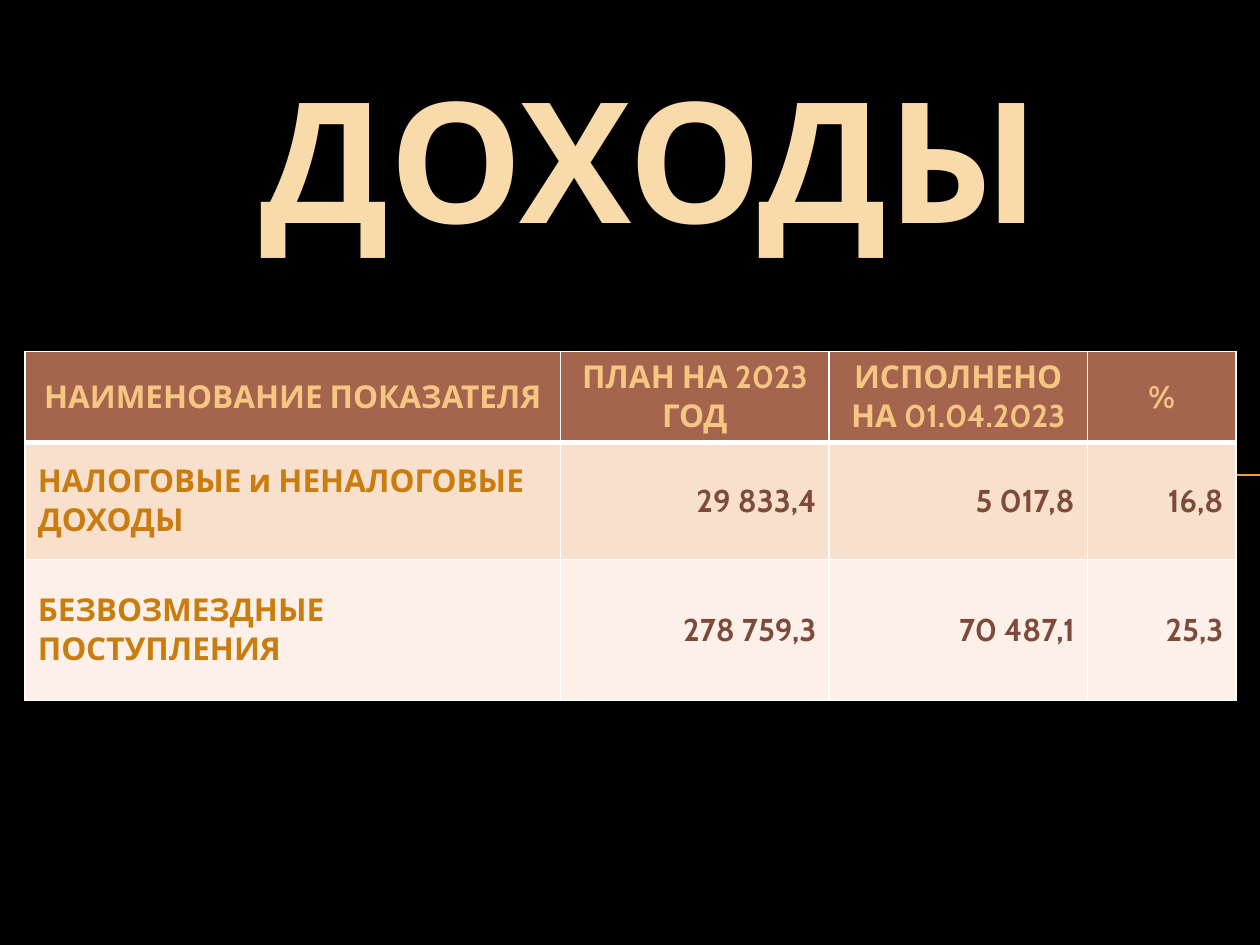
from pptx import Presentation
from pptx.util import Inches, Pt
from pptx.dml.color import RGBColor
from pptx.enum.shapes import MSO_CONNECTOR as Conn
from pptx.enum.text import MSO_ANCHOR as Anchor, PP_ALIGN as Align
from pptx.oxml import parse_xml
from pptx.oxml.ns import nsdecls

BLACK = RGBColor(0x00, 0x00, 0x00)
CREAM = RGBColor(0xF9, 0xDA, 0xAB)
ORANGE = RGBColor(0xF0, 0xA2, 0x2E)
SAND = RGBColor(0xF6, 0xC7, 0x82)
AMBER = RGBColor(0xC8, 0x7D, 0x0E)
BROWN = RGBColor(0x7C, 0x4B, 0x3B)
FILLS = [RGBColor(0xA5, 0x64, 0x4E), RGBColor(0xF9, 0xE0, 0xCD), RGBColor(0xFC, 0xF0, 0xE8)]
WHITE = RGBColor(0xFF, 0xFF, 0xFF)
FONT = "Cabin"

COLS = [4.25, 2.13, 2.05, 1.18]
ROWS = [0.72, 0.93, 1.12]
DATA = [
    ["НАИМЕНОВАНИЕ ПОКАЗАТЕЛЯ", "ПЛАН НА 2023 ГОД", "ИСПОЛНЕНО НА 01.04.2023", "%"],
    ["НАЛОГОВЫЕ и НЕНАЛОГОВЫЕ ДОХОДЫ", "29 833,4", "5 017,8", "16,8"],
    ["БЕЗВОЗМЕЗДНЫЕ ПОСТУПЛЕНИЯ", "278 759,3", "70 487,1", "25,3"],
]


def style(par, text, size, color, align):
    par.text = text
    par.alignment = align
    font = par.font
    font.name, font.size, font.bold = FONT, Pt(size), True
    font.color.rgb = color


def edge(cell, side, width):
    # Borders come before the fill in the cell properties
    props = cell._tc.get_or_add_tcPr()
    line = parse_xml(
        f'<a:{side} {nsdecls("a")} w="{Pt(width)}"><a:solidFill>'
        f'<a:srgbClr val="{WHITE}"/></a:solidFill></a:{side}>')
    props.insert(len(props) - 1, line)


deck = Presentation()
deck.slide_width, deck.slide_height = Inches(10), Inches(7.5)
slide = deck.slides.add_slide(deck.slide_layouts[6])
back = slide.background.fill
back.solid()
back.fore_color.rgb = BLACK

# Rule behind the table
mid = Inches(3.77)
rule = slide.shapes.add_connector(Conn.STRAIGHT, Inches(0.56), mid, deck.slide_width, mid)
rule.line.color.rgb = ORANGE
rule.line.width = Pt(0.75)
rule._element.spPr.append(parse_xml(f'<a:effectLst {nsdecls("a")}/>'))

# Title
title = slide.shapes.add_textbox(Inches(0.91), Inches(0.44), Inches(8.5), Inches(1.49))
frame = title.text_frame
frame.word_wrap = True
frame.margin_top = 0
style(frame.paragraphs[0], "ДОХОДЫ", 96, CREAM, Align.CENTER)

# Income table
table = slide.shapes.add_table(
    len(ROWS), len(COLS), Inches(0.2), Inches(2.79),
    Inches(sum(COLS)), Inches(sum(ROWS))).table
for col, width in zip(table.columns, COLS):
    col.width = Inches(width)
for row, height in zip(table.rows, ROWS):
    row.height = Inches(height)

for r, texts in enumerate(DATA):
    for c, text in enumerate(texts):
        cell = table.cell(r, c)
        cell.vertical_anchor = Anchor.MIDDLE
        cell.fill.solid()
        cell.fill.fore_color.rgb = FILLS[r]
        if r == 0:
            color, align = SAND, Align.CENTER
        elif c == 0:
            color, align = AMBER, Align.LEFT
        else:
            color, align = BROWN, Align.RIGHT
        style(cell.text_frame.paragraphs[0], text, 18, color, align)
        for side in ("lnL", "lnR", "lnT", "lnB"):
            thick = (r, side) in ((0, "lnB"), (1, "lnT"))
            edge(cell, side, 3 if thick else 1)

deck.save("out.pptx")
